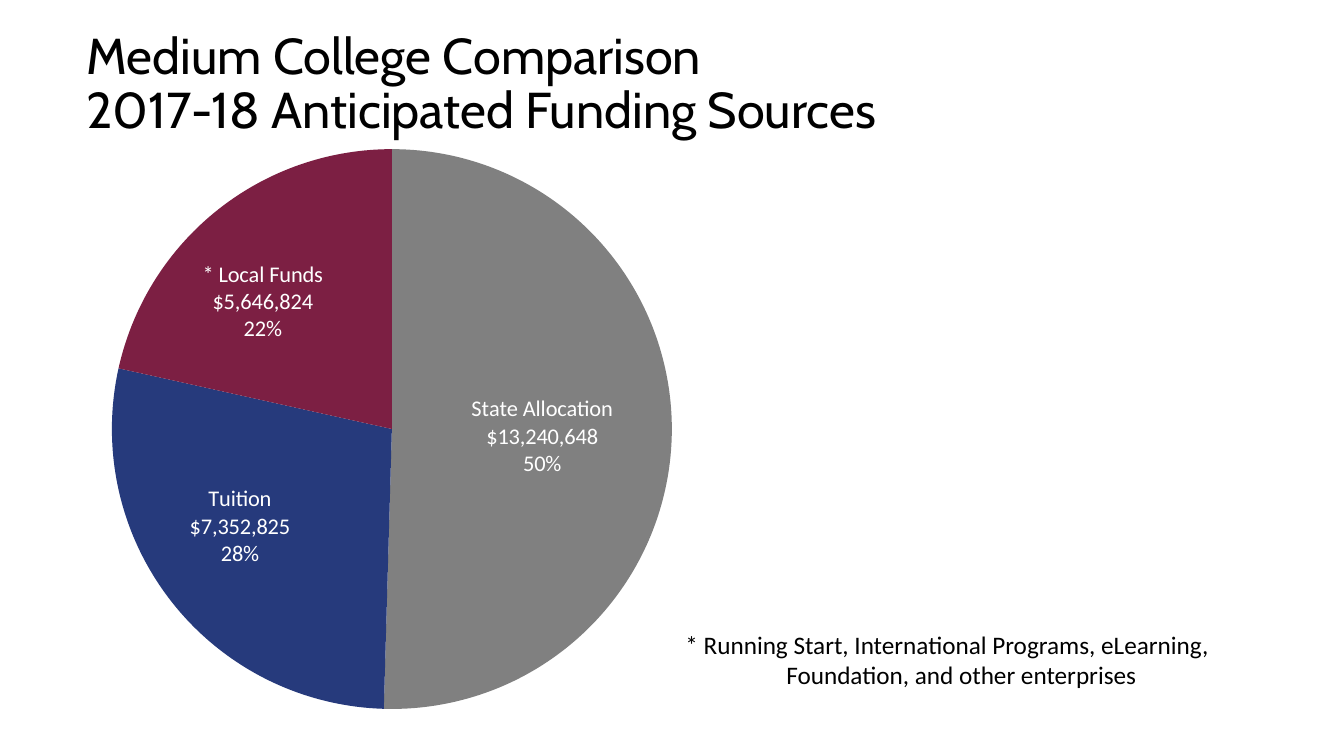
"""Builds the Medium College funding sources slide."""
from pptx import Presentation
from pptx.chart.data import CategoryChartData as ChartData
from pptx.dml.color import RGBColor as RGB
from pptx.enum.chart import XL_CHART_TYPE as Type, XL_LABEL_POSITION as Place
from pptx.enum.text import MSO_ANCHOR as Anchor
from pptx.oxml import parse_xml
from pptx.oxml.ns import nsdecls
from pptx.util import Inches, Pt

THEME = {
    "head": "Cabin", "body": "Calibri",
    "ink": RGB(0, 0, 0), "light": RGB(255, 255, 255),
    "title": Pt(36), "note": Pt(18), "label": Pt(16), "chart": Pt(10),
}
TITLE = "Medium College Comparison\v2017-18 Anticipated Funding Sources"
NOTE = [
    ("* Running Start, International Programs, eLearning,", 0),
    ("Foundation, and other enterprises", 1),
]
FUNDS = [
    ("State Allocation", 13240648, "808080",
     ["State Allocation", "$13,240,648", "50%"], (0.01, 0.01)),
    ("Tuition", 7352825, "263A7C",
     ["Tuition", "$7,352,825", "28%"], (-0.04, 0.02)),
    ("Local Funds", 5646824, "7C1F43",
     ["* Local Funds", "$5,646,824", "22%"], (-0.04, -0.03)),
]
TITLE_BOX = (0.76, 0.12, 11.5, 1.45)
CHART_BOX = (0.45, 1.23, 10.29, 5.81)
NOTE_BOX = (6.7, 6.19, 5.72, 1.01)
PLOT = {"x": 0.064, "y": 0.043, "w": 0.54, "h": 0.956}


def style(font, face, size, color):
    font.name, font.size = THEME[face], THEME[size]
    font.color.rgb = THEME[color]


def add_box(slide, box):
    frame = slide.shapes.add_textbox(*map(Inches, box)).text_frame
    frame.word_wrap = True
    return frame


def layout(sizes, inner=False):
    modes = '<c:xMode val="edge"/><c:yMode val="edge"/>' if inner else ""
    target = '<c:layoutTarget val="inner"/>' if inner else ""
    parts = "".join(f'<c:{key} val="{val}"/>' for key, val in sizes.items())
    return parse_xml(f'<c:layout {nsdecls("c")}><c:manualLayout>{target}{modes}'
                     f'{parts}</c:manualLayout></c:layout>')


def add_title(slide):
    frame = add_box(slide, TITLE_BOX)
    frame.vertical_anchor = Anchor.MIDDLE
    line = frame.paragraphs[0]
    line.text = TITLE
    line.line_spacing = 0.9
    style(line.font, "head", "title", "ink")


def add_note(slide):
    frame = add_box(slide, NOTE_BOX)
    frame.text = "\n".join(text for text, _ in NOTE)
    for line, (_, indent) in zip(frame.paragraphs, NOTE):
        style(line.font, "body", "note", "ink")
        line._p.get_or_add_pPr().set("marL", str(Inches(indent)))


def add_label(point, lines, shift):
    label = point.data_label
    frame = label.text_frame
    frame.text = "\n".join(lines)
    for line in frame.paragraphs:
        style(line.runs[0].font, "body", "label", "light")
    label.position = Place.CENTER
    node = label._get_or_add_dLbl()
    for old in node.xpath("c:layout"):
        node.remove(old)
    node.insert(1, layout(dict(zip("xy", shift))))


def add_pie(slide):
    data = ChartData(number_format='"$"#,##0')
    data.categories = [fund[0] for fund in FUNDS]
    data.add_series("Series 1", [fund[1] for fund in FUNDS])
    chart = slide.shapes.add_chart(Type.PIE, *map(Inches, CHART_BOX), data).chart
    chart.has_title = chart.has_legend = False
    style(chart.font, "body", "chart", "ink")
    pie = chart.plots[0]
    pie.vary_by_categories = True
    series = pie.series[0]
    labels = series.data_labels
    labels.show_value = labels.show_category_name = True
    style(labels.font, "body", "label", "light")
    for index, (_, _, color, lines, shift) in enumerate(FUNDS):
        point = series.points[index]
        point.format.fill.solid()
        point.format.fill.fore_color.rgb = RGB.from_string(color)
        add_label(point, lines, shift)
    area = chart._chartSpace.xpath("c:chart/c:plotArea")[0]
    for old in area.xpath("c:layout"):
        area.remove(old)
    area.insert(0, layout(PLOT, inner=True))


def main():
    deck = Presentation()
    deck.slide_width, deck.slide_height = Inches(13.33), Inches(7.5)
    slide = deck.slides.add_slide(deck.slide_layouts[6])
    add_title(slide)
    add_pie(slide)
    add_note(slide)
    deck.save("out.pptx")


if __name__ == "__main__":
    main()
